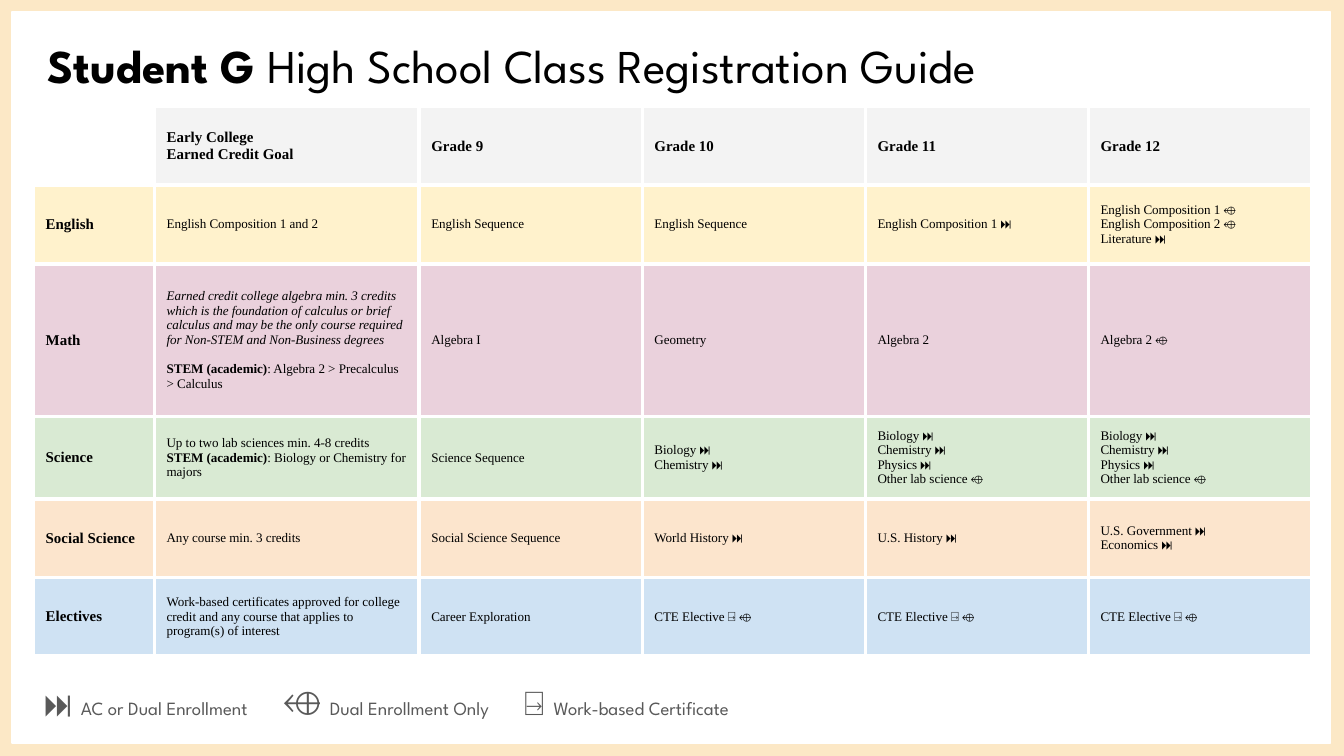
from dataclasses import dataclass

from lxml import etree
from pptx import Presentation
from pptx.dml.color import RGBColor
from pptx.enum import shapes, text
from pptx.oxml import ns
from pptx.util import Inches, Pt

WIDE, HIGH = Inches(10), Inches(5.625)
SERIF, SANS = "Times New Roman", "League Spartan"


@dataclass
class Box:
    """A place on the slide, in percent of its width and height."""
    left: float
    top: float
    width: float
    height: float

    def emu(self) -> tuple:
        return (across(self.left), down(self.top), across(self.width), down(self.height))


@dataclass
class Band:
    """A table row; lines split at newlines, *bold* and a leading _ for italic."""
    fill: str
    height: float
    cells: list


@dataclass
class Key:
    sign: str
    label: str
    box: Box


def across(share: float) -> int:
    return round(WIDE * share / 100)


def down(share: float) -> int:
    return round(HIGH * share / 100)


def color(code: str) -> RGBColor:
    return RGBColor.from_string(code)


def paint(fill, code: str) -> None:
    fill.solid()
    fill.fore_color.rgb = color(code)


def style(item, values: dict) -> None:
    for name, value in values.items():
        setattr(item, name, value)


def write(para, words: str, face: str, size: float, code: str = "000000", **look) -> None:
    run = para.add_run()
    run.text = words
    style(run.font, {"name": face, "size": Pt(size), **look})
    run.font.color.rgb = color(code)


def frame_in(frame, inset: float) -> None:
    style(frame, {f"margin_{side}": Inches(inset) for side in ("left", "right", "top", "bottom")})
    style(frame, {"word_wrap": True, "auto_size": text.MSO_AUTO_SIZE.NONE,
                  "vertical_anchor": text.MSO_ANCHOR.MIDDLE})


def edge(cell, code: str, points: float) -> None:
    props = cell._tc.get_or_add_tcPr()
    for side in "LRTB":
        line = etree.SubElement(props, ns.qn(f"a:ln{side}"), w=str(Pt(points)))
        solid = etree.SubElement(line, ns.qn("a:solidFill"))
        etree.SubElement(solid, ns.qn("a:srgbClr"), val=code)


def fill_cell(cell, words: str, size: float, bold: bool) -> None:
    style(cell, {"margin_left": Inches(0.09), "margin_right": Inches(0.09),
                 "margin_top": Inches(0.07), "margin_bottom": Inches(0.07),
                 "vertical_anchor": text.MSO_ANCHOR.MIDDLE})
    frame = cell.text_frame
    for row, line in enumerate(words.split("\n")):
        para = frame.add_paragraph() if row else frame.paragraphs[0]
        if row and words.startswith("_"):
            para.space_before = Pt(8)
        for part, piece in enumerate(line.lstrip("_").split("*")):
            if piece:
                write(para, piece, SERIF, size, bold=bold or part % 2 == 1,
                      italic=line.startswith("_"))


def draw_table(slide, box: Box, bands: list, widths: list) -> None:
    table = slide.shapes.add_table(len(bands), len(widths), *box.emu()).table
    for col, width in zip(table.columns, widths):
        col.width = across(width)
    for r, band in enumerate(bands):
        table.rows[r].height = down(band.height)
        for c in range(len(widths)):
            cell = table.cell(r, c)
            edge(cell, "FFFFFF", 2.25)
            if not band.cells:
                cell.fill.background()
                continue
            paint(cell.fill, band.fill if r or c else "FFFFFF")
            head = r == 0 or c == 0
            fill_cell(cell, band.cells[c], 8 if head else 7, head)
    last = len(bands) - 1
    table.cell(last, 0).merge(table.cell(last, len(widths) - 1))


def draw_key(slide, key: Key) -> None:
    frame = slide.shapes.add_textbox(*key.box.emu()).text_frame
    frame_in(frame, 0.08)
    para = frame.paragraphs[0]
    write(para, key.sign + " ", "Arial", 18, "595959")
    write(para, key.label, SANS, 10, "595959")


def draw_page(slide) -> None:
    paint(slide.background.fill, "FCE8C6")
    page = slide.shapes.add_shape(shapes.MSO_SHAPE.RECTANGLE, *Box(0.9, 1.6, 98.1, 96.7).emu())
    page.shadow.inherit = False
    paint(page.fill, "FFFFFF")
    paint(page.line.fill, "FFFFFF")
    page.line.width = Pt(0.75)
    slide.shapes._spTree.insert(2, page._element)


def draw_title(slide, box: Box) -> None:
    title = slide.shapes.title
    style(title, dict(zip(("left", "top", "width", "height"), box.emu())))
    frame_in(title.text_frame, 0.1)
    para = title.text_frame.paragraphs[0]
    para.alignment = text.PP_ALIGN.LEFT
    write(para, "Student G", SANS, 25.2, bold=True)
    write(para, " High School Class Registration Guide", SANS, 25.2, bold=False)


ROW = 10.4
LABS = "Biology ⏭\nChemistry ⏭"
MORE = LABS + "\nPhysics ⏭\nOther lab science ⬲"
BANDS = [
    Band("F3F3F3", ROW, ["", "Early College\nEarned Credit Goal"]
         + [f"Grade {year}" for year in range(9, 13)]),
    Band("FFF2CC", ROW, ["English", "English Composition 1 and 2", "English Sequence",
                         "English Sequence", "English Composition 1 ⏭",
                         "English Composition 1 ⬲\nEnglish Composition 2 ⬲\nLiterature ⏭"]),
    Band("EAD1DC", 20.2, ["Math",
                          "_Earned credit college algebra min. 3 credits which is the foundation "
                          "of calculus or brief calculus and may be the only course required for "
                          "Non-STEM and Non-Business degrees\n"
                          "*STEM (academic)*: Algebra 2 > Precalculus > Calculus",
                          "Algebra I", "Geometry", "Algebra 2", "Algebra 2 ⬲"]),
    Band("D9EAD3", 10.9, ["Science",
                          "Up to two lab sciences min. 4-8 credits\n"
                          "*STEM (academic)*: Biology or Chemistry for majors",
                          "Science Sequence", LABS, MORE, MORE]),
    Band("FCE5CD", ROW, ["Social Science", "Any course min. 3 credits",
                         "Social Science Sequence", "World History ⏭", "U.S. History ⏭",
                         "U.S. Government ⏭\nEconomics ⏭"]),
    Band("CFE2F3", ROW, ["Electives",
                         "Work-based certificates approved for college credit and any course "
                         "that applies to program(s) of interest",
                         "Career Exploration"] + ["CTE Elective ⍈ ⬲"] * 3),
    Band("FFFFFF", ROW, []),
]
KEYS = [
    Key("⏭", "AC or Dual Enrollment", Box(2.5, 90.1, 17.9, 5.5)),
    Key("⬲", "Dual Enrollment Only", Box(20.3, 90.1, 17.9, 5.5)),
    Key("⍈", "Work-based Certificate", Box(38.2, 89.2, 19.3, 7.3)),
]


def main() -> None:
    deck = Presentation()
    style(deck, {"slide_width": WIDE, "slide_height": HIGH})
    slide = deck.slides.add_slide(deck.slide_layouts[5])
    draw_page(slide)
    draw_title(slide, Box(2.5, 3, 93.2, 11.2))
    draw_table(slide, Box(2.5, 14.1, 95.1, 83.1), BANDS, [9, 19.7] + [16.6] * 4)
    for key in KEYS:
        draw_key(slide, key)
    deck.save("out.pptx")


if __name__ == "__main__":
    main()
